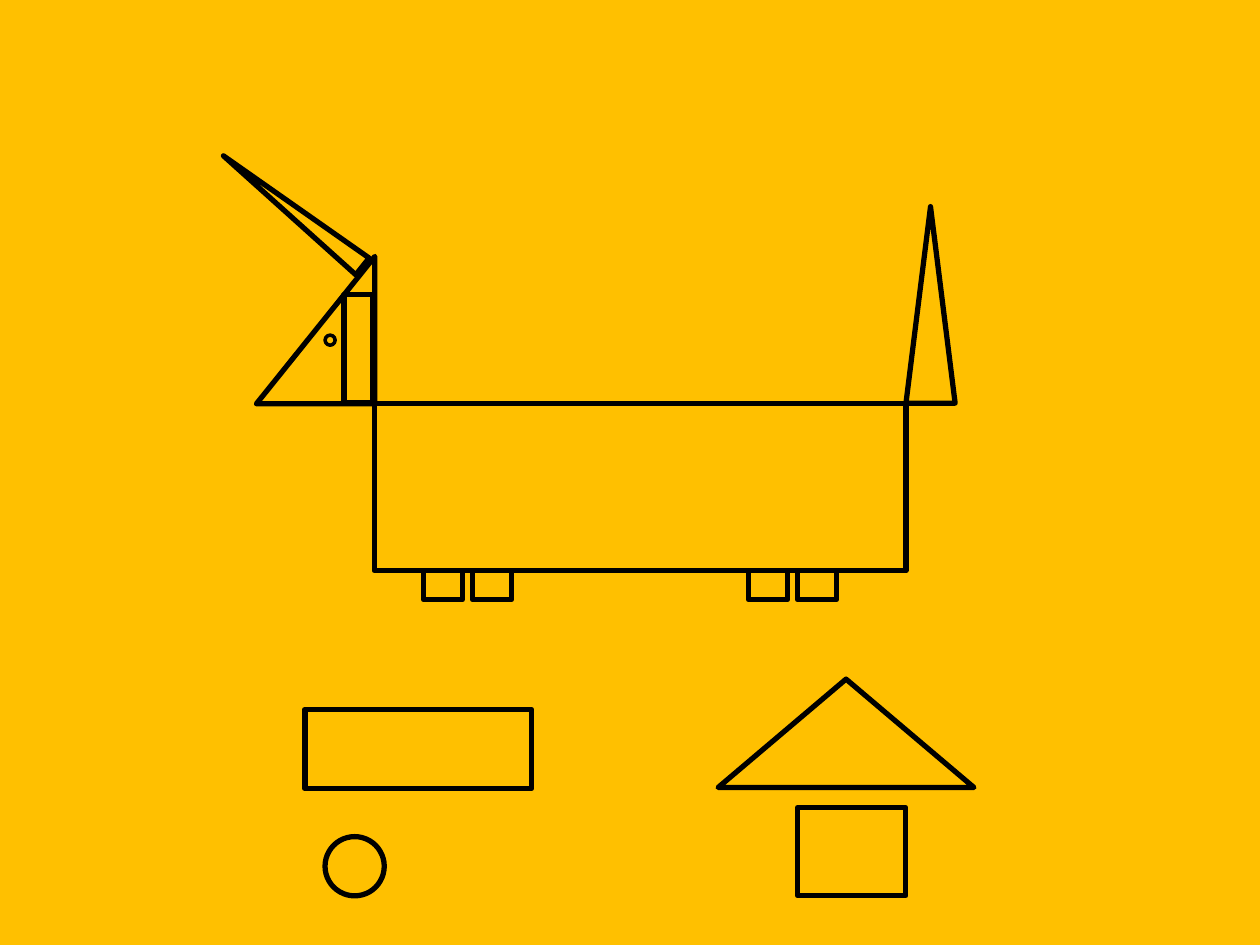
from lxml import etree
from pptx import Presentation
from pptx.dml.color import RGBColor
from pptx.enum import shapes
from pptx.oxml.ns import qn
from pptx.util import Inches, Pt

COLORS = {"background": "FFC000", "outline": "000000"}
KIND = shapes.MSO_SHAPE

prs = Presentation()
prs.slide_width, prs.slide_height = Inches(10), Inches(7.5)
s = prs.slides.add_slide(prs.slide_layouts[6])
s.background.fill.solid()
s.background.fill.fore_color.rgb = RGBColor.from_string(COLORS["background"])


def outline(kind, left, top, width, height, rotation=0, weight=3):
    """Draw an unfilled shape with a black, round-cornered line."""
    sp = s.shapes.add_shape(kind, Inches(left), Inches(top), Inches(width), Inches(height))
    sp.shadow.inherit = False
    sp.rotation = rotation
    sp.fill.background()
    sp.line.color.rgb = RGBColor.from_string(COLORS["outline"])
    sp.line.width = Pt(weight)
    etree.SubElement(sp.line._ln, qn("a:round"))


# Body and legs
outline(KIND.RECTANGLE, 2.97, 3.2, 4.22, 1.33)
for pair_left in (3.36, 5.94):
    for offset in (0, 0.39):
        outline(KIND.RECTANGLE, pair_left + offset, 4.53, 0.31, 0.23)

# Head, ear and eye
outline(KIND.RIGHT_TRIANGLE, 1.92, 2.15, 1.17, 0.94, rotation=270)
outline(KIND.RECTANGLE, 2.73, 2.34, 0.23, 0.86)
outline(KIND.OVAL, 2.58, 2.66, 0.08, 0.08, weight=2)

# Tail
outline(KIND.ISOSCELES_TRIANGLE, 7.19, 1.64, 0.39, 1.56)

# Basic shapes below the animal
outline(KIND.RECTANGLE, 2.42, 5.63, 1.8, 0.63)
outline(KIND.ISOSCELES_TRIANGLE, 5.7, 5.39, 2.03, 0.86)
outline(KIND.OVAL, 2.58, 6.64, 0.47, 0.47)
outline(KIND.RECTANGLE, 6.33, 6.41, 0.86, 0.7)

# Horn
outline(KIND.ISOSCELES_TRIANGLE, 2.24, 0.97, 0.17, 1.41, rotation=308.5)

prs.save("out.pptx")
